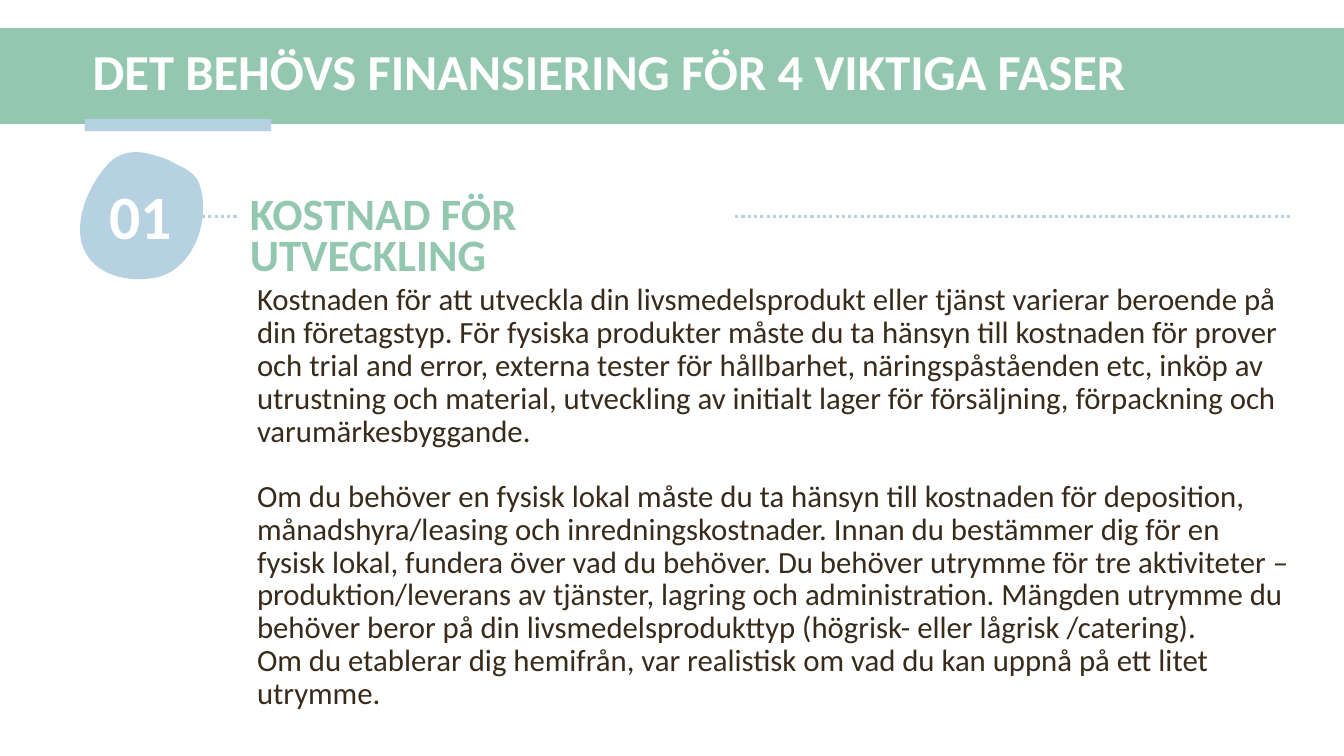
from dataclasses import dataclass

import lxml.etree
import pptx
import pptx.dml.color
import pptx.enum.dml
import pptx.enum.shapes
import pptx.enum.text
import pptx.oxml.ns
import pptx.util

WIDTH, HEIGHT = 13.33, 7.5
COLUMNS, ROWS = 160, 90
GREEN, BLUE, BROWN, WHITE = "94C7B0", "B6D1E1", "382B1B", "FFFFFF"
LEFT = pptx.enum.text.PP_ALIGN.LEFT
CENTER = pptx.enum.text.PP_ALIGN.CENTER
TOP = pptx.enum.text.MSO_ANCHOR.TOP
MIDDLE = pptx.enum.text.MSO_ANCHOR.MIDDLE
CURVE_STEPS = 16


@dataclass(frozen=True)
class Area:
    column: float
    row: float
    columns: float
    rows: float


@dataclass(frozen=True)
class Bar:
    area: Area
    fill: str


BARS = [
    Bar(Area(0, 3.36, COLUMNS, 11.4), GREEN),
    Bar(Area(10.08, 14.16, 22.2, 1.44), BLUE),
]
TITLE_AREA = Area(9.84, 4.08, 143.16, 9.48)
BODY_AREA = Area(29.4, 33.24, 126, 44.52)
HEADING_AREA = Area(28.56, 23.04, 58.8, 5.76)
NUMBER_AREA = Area(9.48, 25.44, 14.52, 12.12)

BLOB_START = (18.36, 18.48)
BLOB_CURVES = [
    ((16.44, 17.88), (14.4, 17.88), (12.84, 19.56)),
    ((11.28, 21.24), (9.84, 24), (9.6, 26.28)),
    ((8.88, 31.56), (13.56, 33.84), (18.24, 33.12)),
    ((22.92, 32.4), (25.2, 26.28), (23.76, 21.96)),
    ((23.28, 20.64), (22.08, 20.04), (21, 19.56)),
    ((20.16, 19.08), (19.32, 18.72), BLOB_START),
]

PARAGRAPHS = [
    "Kostnaden för att utveckla din livsmedelsprodukt eller tjänst varierar beroende på "
    "din företagstyp. För fysiska produkter måste du ta hänsyn till kostnaden för prover "
    "och trial and error, externa tester för hållbarhet, näringspåståenden etc, inköp av "
    "utrustning och material, utveckling av initialt lager för försäljning, förpackning och "
    "varumärkesbyggande.",
    "Om du behöver en fysisk lokal måste du ta hänsyn till kostnaden för deposition, "
    "månadshyra/leasing och inredningskostnader. Innan du bestämmer dig för en fysisk "
    "lokal, fundera över vad du behöver. Du behöver utrymme för tre aktiviteter – "
    "produktion/leverans av tjänster, lagring och administration. Mängden utrymme du "
    "behöver beror på din livsmedelsprodukttyp (högrisk- eller lågrisk /catering).\v"
    "Om du etablerar dig hemifrån, var realistisk om vad du kan uppnå på ett litet utrymme.",
]


def color(value: str) -> pptx.dml.color.RGBColor:
    return pptx.dml.color.RGBColor.from_string(value)


def across(columns: float) -> int:
    return pptx.util.Inches(columns * WIDTH / COLUMNS)


def down(rows: float) -> int:
    return pptx.util.Inches(rows * HEIGHT / ROWS)


def bounds(area: Area) -> tuple[int, int, int, int]:
    return across(area.column), down(area.row), across(area.columns), down(area.rows)


def place(shape, area: Area) -> None:
    shape.left, shape.top, shape.width, shape.height = bounds(area)


def paint(shape, fill: str) -> None:
    shape.shadow.inherit = False
    shape.fill.solid()
    shape.fill.fore_color.rgb = color(fill)
    shape.line.fill.background()


def write(shape, texts: list[str], *, size: float, ink: str, spacing, bold: bool = False,
          align=LEFT, anchor=TOP, gap: float = 0) -> None:
    frame = shape.text_frame
    frame.word_wrap = True
    frame.auto_size = pptx.enum.text.MSO_AUTO_SIZE.NONE
    frame.vertical_anchor = anchor
    for index, text in enumerate(texts):
        para = frame.add_paragraph() if index else frame.paragraphs[0]
        para.text = text
        properties = para._p.get_or_add_pPr()
        properties.set("marL", "0")
        properties.set("indent", "0")
        lxml.etree.SubElement(properties, pptx.oxml.ns.qn("a:buNone"))
        para.alignment = align
        para.line_spacing = spacing
        para.space_before = pptx.util.Pt(gap if index else 0)
        para.space_after = pptx.util.Pt(0)
        for span in para.runs:
            span.font.name = "Calibri"
            span.font.size = pptx.util.Pt(size)
            span.font.bold = bold
            span.font.color.rgb = color(ink)


def add_bar(page, bar: Bar):
    shape = page.shapes.add_shape(pptx.enum.shapes.MSO_SHAPE.RECTANGLE, *bounds(bar.area))
    paint(shape, bar.fill)
    return shape


def add_dotted_line(page, start: float, end: float, row: float) -> None:
    line = page.shapes.add_connector(pptx.enum.shapes.MSO_CONNECTOR.STRAIGHT,
                                     across(start), down(row), across(end), down(row))
    line.line.color.rgb = color(BLUE)
    line.line.width = pptx.util.Pt(2.25)
    line.line.dash_style = pptx.enum.dml.MSO_LINE.ROUND_DOT
    properties = line.element.find(pptx.oxml.ns.qn("p:spPr"))
    lxml.etree.SubElement(properties, pptx.oxml.ns.qn("a:effectLst"))


def blob_points() -> list[tuple[int, int]]:
    points = []
    start = BLOB_START
    for first, second, end in BLOB_CURVES:
        for step in range(1, CURVE_STEPS + 1):
            t = step / CURVE_STEPS
            weights = ((1 - t) ** 3, 3 * t * (1 - t) ** 2, 3 * t ** 2 * (1 - t), t ** 3)
            corners = (start, first, second, end)
            column = sum(weight * corner[0] for weight, corner in zip(weights, corners))
            row = sum(weight * corner[1] for weight, corner in zip(weights, corners))
            points.append((across(column), down(row)))
        start = end
    return points


def add_badge(page, number: str) -> None:
    badge = page.shapes.add_group_shape()
    builder = badge.shapes.build_freeform(across(BLOB_START[0]), down(BLOB_START[1]))
    builder.add_line_segments(blob_points(), close=True)
    paint(builder.convert_to_shape(), BLUE)
    label = badge.shapes.add_textbox(*bounds(NUMBER_AREA))
    write(label, [number], size=44, ink=WHITE, bold=True, align=CENTER,
          spacing=pptx.util.Pt(23.4))


def main() -> None:
    deck = pptx.Presentation()
    deck.slide_width = pptx.util.Inches(WIDTH)
    deck.slide_height = pptx.util.Inches(HEIGHT)
    page = deck.slides.add_slide(deck.slide_layouts[1])
    title, body = page.placeholders[0], page.placeholders[1]

    for bar in BARS:
        add_bar(page, bar)
    for placeholder, area in ((title, TITLE_AREA), (body, BODY_AREA)):
        place(placeholder, area)
        page.shapes.element.append(placeholder.element)
    write(title, ["DET BEHÖVS FINANSIERING FÖR 4 VIKTIGA FASER"], size=36, ink=WHITE,
          bold=True, anchor=MIDDLE, spacing=0.9)
    write(body, PARAGRAPHS, size=22, ink=BROWN, spacing=pptx.util.Pt(23.4), gap=23.4)

    add_dotted_line(page, 153.6, 10.8, 25.8)
    heading = add_bar(page, Bar(HEADING_AREA, WHITE))
    write(heading, ["KOSTNAD FÖR UTVECKLING"], size=32, ink=GREEN, bold=True,
          spacing=pptx.util.Pt(29.4))
    add_badge(page, "01")
    deck.save("out.pptx")


if __name__ == "__main__":
    main()
